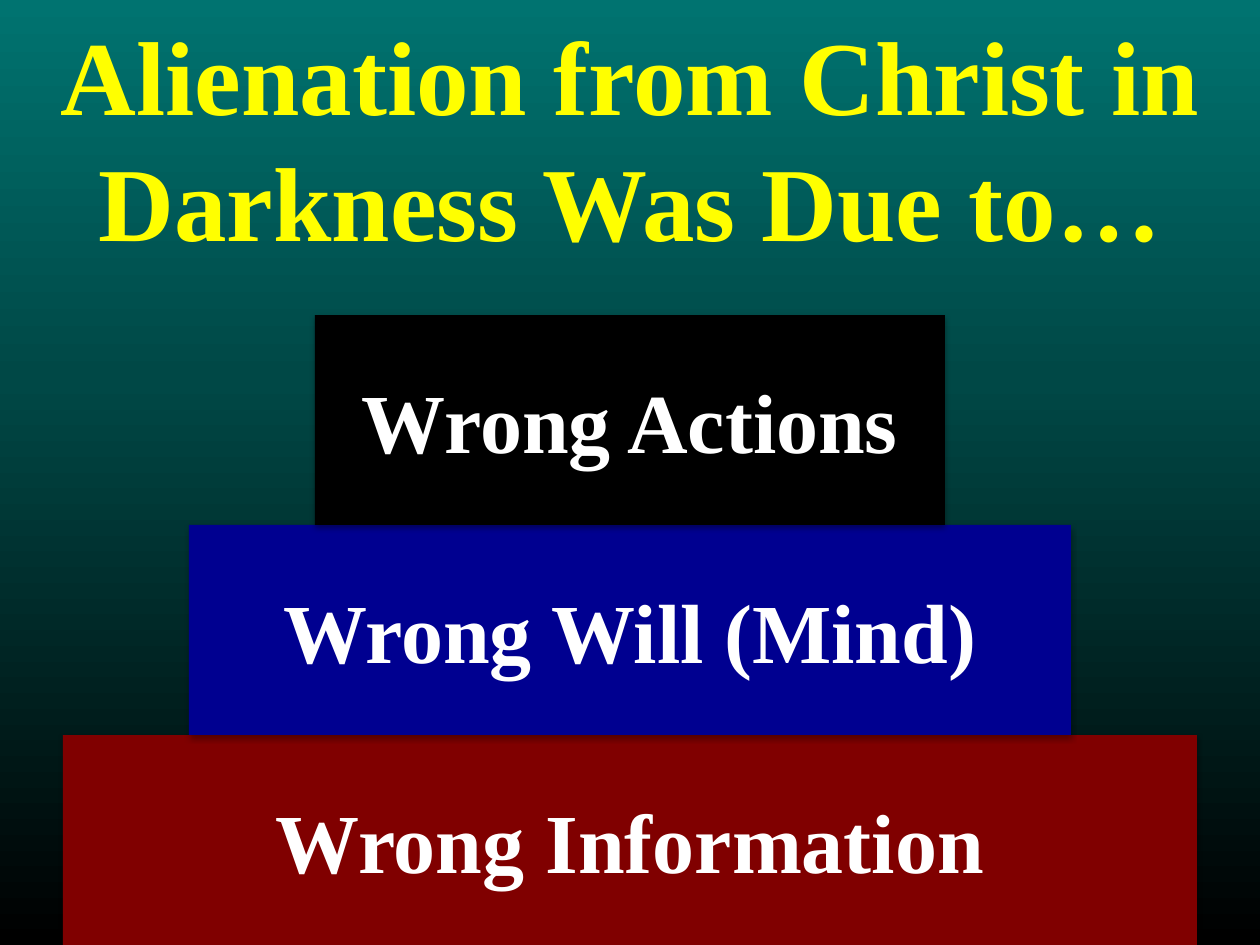
import pptx
import pptx.dml.color
import pptx.enum.shapes
import pptx.enum.text
import pptx.oxml
import pptx.oxml.ns
import pptx.util
from lxml import etree

Pt = pptx.util.Pt
qn = pptx.oxml.ns.qn

COLORS = {
    "top": "007370", "middle": "004846", "black": "000000",
    "title": "FFFF00", "text": "FFFFFF", "red": "800000", "blue": "000090",
}
STEP_HEIGHT = 120
SLIDE_W, SLIDE_H = 720, 540


def rgb(name):
    return pptx.dml.color.RGBColor.from_string(COLORS[name])


def add_color_stop(parent, pos, name):
    gs = etree.SubElement(parent, qn("a:gs"), pos=str(pos * 1000))
    etree.SubElement(gs, qn("a:srgbClr"), val=COLORS[name])


def set_background(s):
    fill = s.background.fill
    fill.gradient()
    fill.gradient_angle = 270
    stops = s.element.find(".//" + qn("a:gsLst"))
    for gs in list(stops):
        stops.remove(gs)
    for pos, name in ((0, "top"), (40, "middle"), (100, "black")):
        add_color_stop(stops, pos, name)


def set_text(sp, text, size, color):
    tf = sp.text_frame
    tf.word_wrap = True
    tf.vertical_anchor = pptx.enum.text.MSO_ANCHOR.MIDDLE
    p = tf.paragraphs[0]
    p.alignment = pptx.enum.text.PP_ALIGN.CENTER
    r = p.add_run()
    r.text = text
    font = {"name": "Times New Roman", "size": Pt(size), "bold": True}
    for key, value in font.items():
        setattr(r.font, key, value)
    r.font.color.rgb = rgb(color)


def add_shadow(sp):
    """Give the shape a soft shadow straight below it."""
    sp.shadow.inherit = False
    effects = sp.element.spPr.find(qn("a:effectLst"))
    shadow = etree.SubElement(
        effects, qn("a:outerShdw"), blurRad=str(Pt(3.1)), dist=str(Pt(1.8)),
        dir="5400000", rotWithShape="0")
    color = etree.SubElement(shadow, qn("a:srgbClr"), val=COLORS["black"])
    etree.SubElement(color, qn("a:alpha"), val="35000")


def add_title(s, text):
    sp = s.shapes.add_textbox(0, 0, Pt(SLIDE_W), Pt(156))
    set_text(sp, text, 60, "title")


def add_step(s, level, text, color):
    """Add a centred block; level 0 stands on the bottom edge."""
    width = 648 - 144 * level
    sp = s.shapes.add_shape(
        pptx.enum.shapes.MSO_SHAPE.RECTANGLE, Pt((SLIDE_W - width) / 2),
        Pt(SLIDE_H - STEP_HEIGHT * (level + 1)), Pt(width), Pt(STEP_HEIGHT))
    sp.fill.solid()
    sp.fill.fore_color.rgb = rgb(color)
    sp.line.fill.background()
    add_shadow(sp)
    set_text(sp, text, 48, "text")


def main():
    prs = pptx.Presentation()
    prs.slide_width, prs.slide_height = Pt(SLIDE_W), Pt(SLIDE_H)
    s = prs.slides.add_slide(prs.slide_layouts[6])
    set_background(s)
    add_title(s, "Alienation from Christ in Darkness Was Due to…")
    steps = (("Wrong Information", "red"), ("Wrong Will (Mind)", "blue"),
             ("Wrong Actions", "black"))
    for level, (text, color) in enumerate(steps):
        add_step(s, level, text, color)
    prs.save("out.pptx")


if __name__ == "__main__":
    main()
